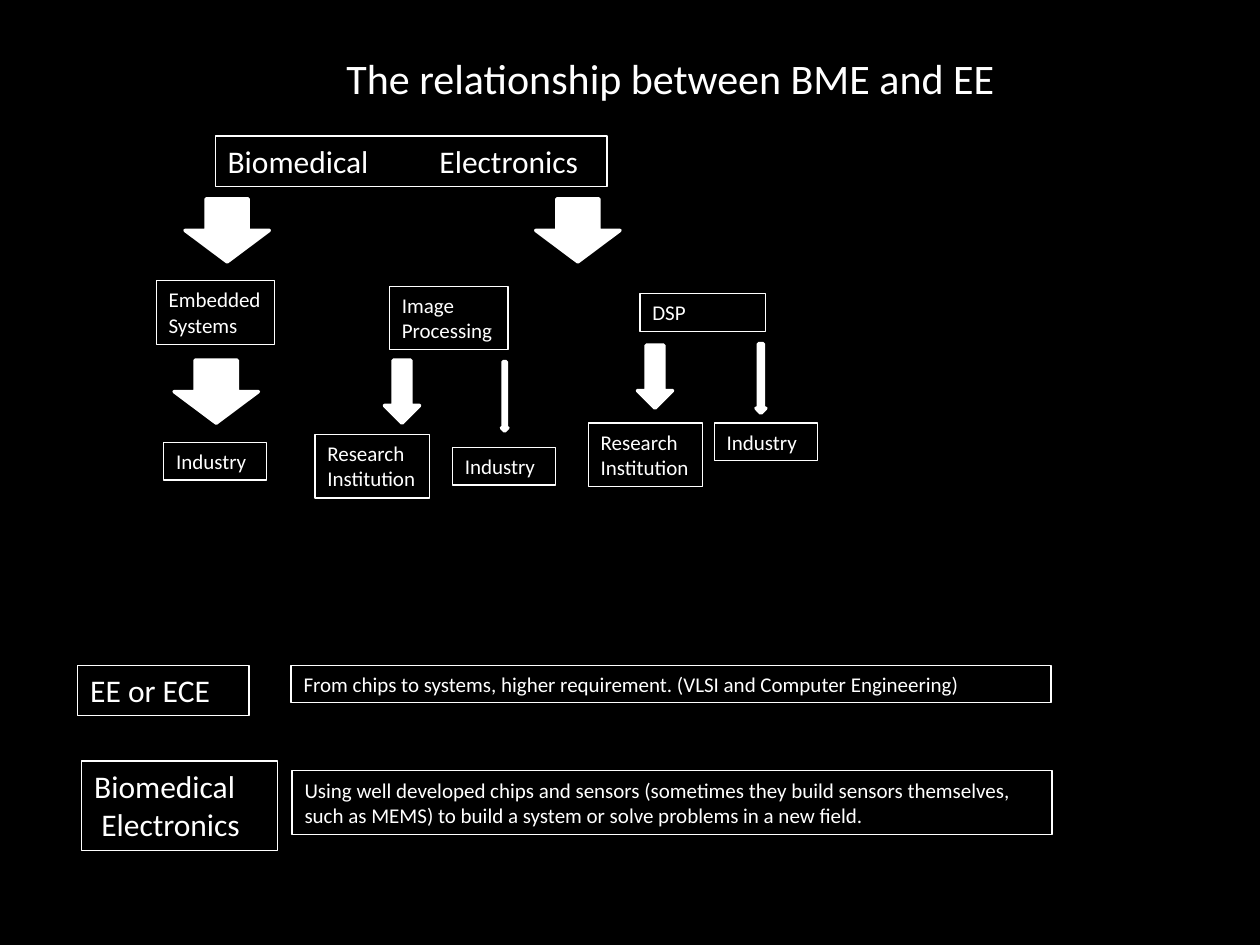
from lxml.etree import SubElement
from pptx import Presentation
from pptx.dml.color import RGBColor
from pptx.enum.shapes import MSO_SHAPE
from pptx.enum.text import MSO_ANCHOR, MSO_AUTO_SIZE, PP_ALIGN
from pptx.oxml.ns import qn
from pptx.util import Cm, Pt

WHITE, BLACK = "FFFFFF", "000000"
FONT = "Calibri"
TITLE = "The relationship between BME and EE"
FIELDS_TAB = 4.27
HEIGHTS = {(12, 1): 0.76, (12, 2): 1.28, (18, 1): 1.02, (18, 2): 1.8}

# text, left, top, width, font size, lines shown
LABELS = [
    ("Biomedical\tElectronics", 4.34, 2.74, 7.9, 18, 1),
    ("Embedded Systems", 3.15, 5.66, 2.39, 12, 2),
    ("Image Processing", 7.85, 5.77, 2.39, 12, 2),
    ("DSP", 12.9, 5.92, 2.54, 12, 1),
    ("EE or ECE", 1.57, 13.41, 3.45, 18, 1),
    ("From chips to systems, higher requirement. (VLSI and Computer Engineering)",
     5.87, 13.41, 15.32, 12, 1),
    ("Biomedical\n Electronics", 1.65, 15.34, 3.94, 18, 2),
    ("Using well developed chips and sensors (sometimes they build sensors "
     "themselves, such as MEMS) to build a system or solve problems in a new field.",
     5.89, 15.54, 15.32, 12, 2),
]
INDUSTRY_SPOTS = [(3.3, 8.92), (9.12, 9.02), (14.4, 8.53)]
RESEARCH_SPOTS = [(6.35, 8.76), (11.86, 8.53)]
ARROWS = {
    (1.7, 1.27): [(3.73, 4.01), (10.8, 4.01), (3.51, 7.26)],
    (0.71, 1.27): [(7.75, 7.26), (12.85, 6.96)],
    (0.13, 1.4): [(10.11, 7.29)],
    (0.2, 1.4): [(15.24, 6.93)],
}


def color(code):
    return RGBColor.from_string(code)


def add_text(slide, text, left, top, width, height, size):
    box = slide.shapes.add_textbox(Cm(left), Cm(top), Cm(width), Cm(height))
    frame = box.text_frame
    frame.text = text
    frame.word_wrap = True
    for paragraph in frame.paragraphs:
        for run in paragraph.runs:
            run.font.name = FONT
            run.font.size = Pt(size)
            run.font.color.rgb = color(WHITE)
    return box


def add_label(slide, text, left, top, width, size, lines):
    label = add_text(slide, text, left, top, width, HEIGHTS[size, lines], size)
    label.text_frame.auto_size = MSO_AUTO_SIZE.SHAPE_TO_FIT_TEXT
    label.line.color.rgb = color(WHITE)
    label.line.width = Pt(0.75)
    return label


def add_arrow(slide, left, top, width, height):
    arrow = slide.shapes.add_shape(
        MSO_SHAPE.DOWN_ARROW, Cm(left), Cm(top), Cm(width), Cm(height))
    arrow.shadow.inherit = False
    arrow.fill.solid()
    arrow.fill.fore_color.rgb = color(WHITE)
    arrow.line.color.rgb = color(WHITE)
    arrow.line.width = Pt(2)


def set_tab(paragraph, position):
    properties = paragraph._p.get_or_add_pPr()
    stops = SubElement(properties, qn("a:tabLst"))
    SubElement(stops, qn("a:tab"), pos=str(Cm(position)), algn="l")


def main():
    """Build the slide on how BME and EE relate."""
    deck = Presentation()
    deck.slide_width, deck.slide_height = Cm(25.4), Cm(19.05)
    slide = deck.slides.add_slide(deck.slide_layouts[6])
    slide.background.fill.solid()
    slide.background.fill.fore_color.rgb = color(BLACK)

    title = add_text(slide, TITLE, 5.26, 0.84, 16.51, 1.47, 24)
    title.text_frame.vertical_anchor = MSO_ANCHOR.MIDDLE
    title.text_frame.paragraphs[0].alignment = PP_ALIGN.CENTER

    fields, *_ = [add_label(slide, *label) for label in LABELS]
    set_tab(fields.text_frame.paragraphs[0], FIELDS_TAB)
    for left, top in INDUSTRY_SPOTS:
        add_label(slide, "Industry", left, top, 2.08, 12, 1)
    for left, top in RESEARCH_SPOTS:
        add_label(slide, "Research\nInstitution", left, top, 2.31, 12, 2)
    for (width, height), spots in ARROWS.items():
        for left, top in spots:
            add_arrow(slide, left, top, width, height)

    deck.save("out.pptx")


if __name__ == "__main__":
    main()
